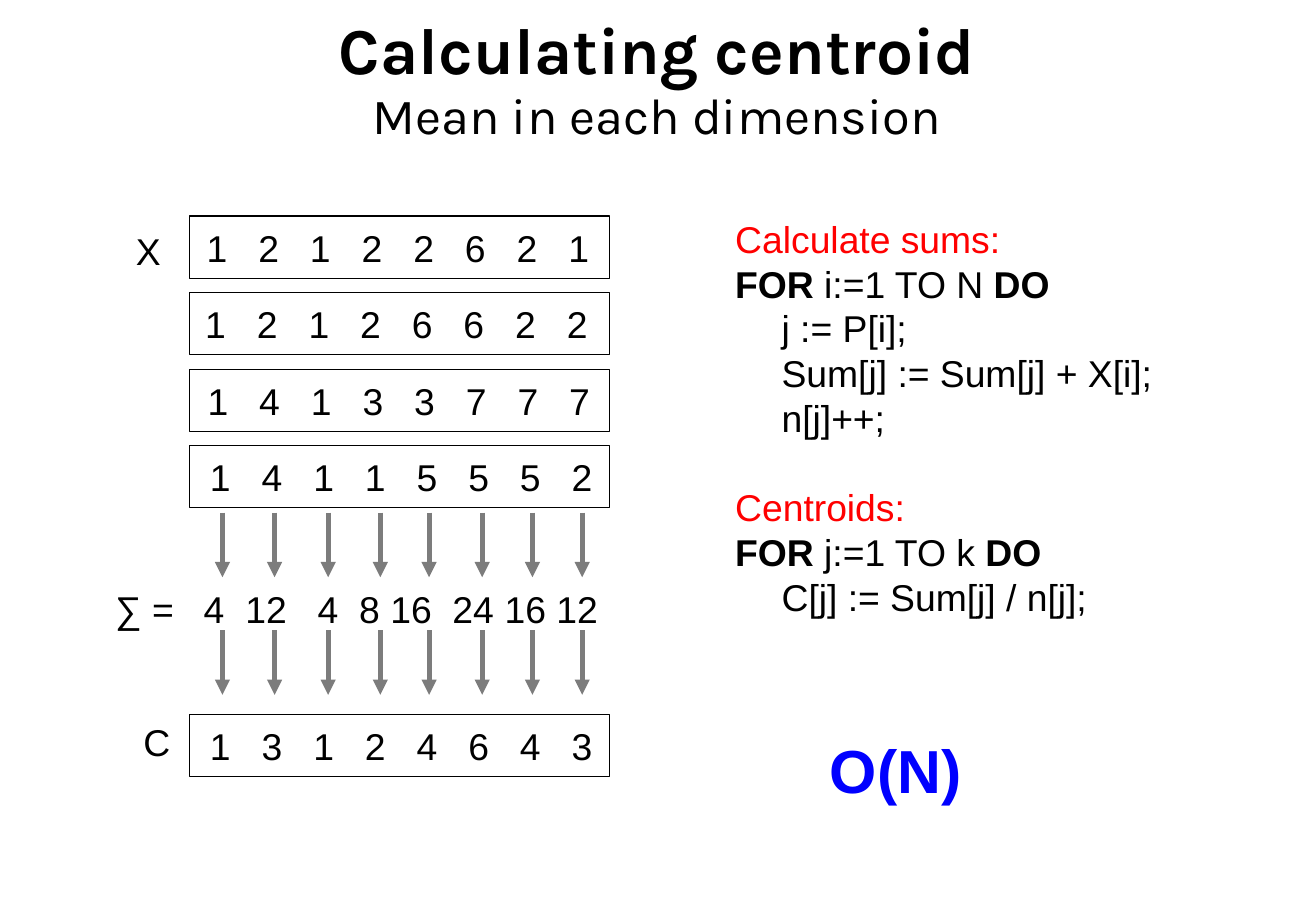
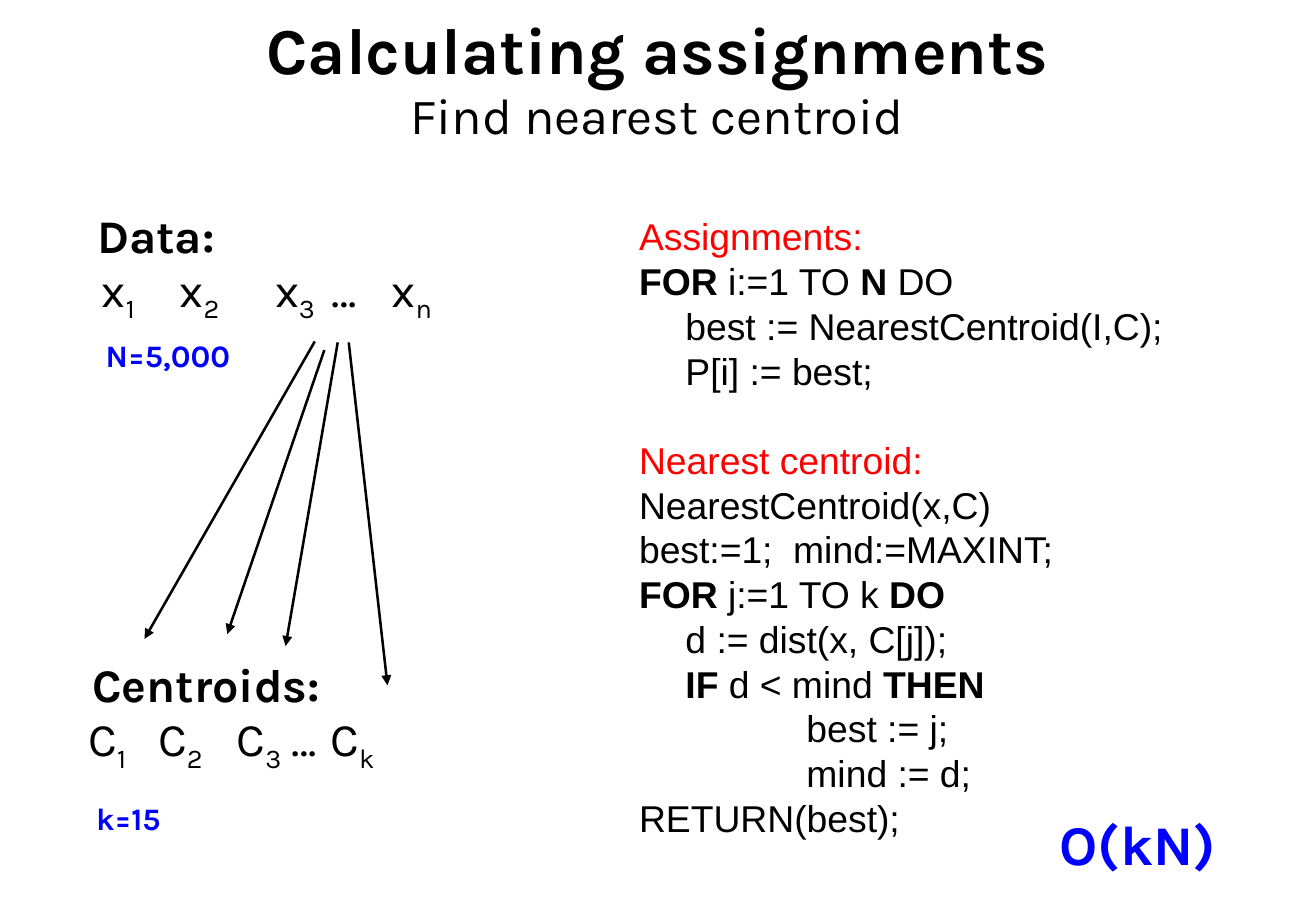
from pptx import Presentation
from pptx.dml.color import RGBColor
from pptx.enum.shapes import MSO_CONNECTOR, MSO_SHAPE
from pptx.enum.text import MSO_ANCHOR, PP_ALIGN
from pptx.oxml.ns import qn
from pptx.util import Cm, Pt
from lxml.etree import SubElement

BLACK, RED, BLUE, GREY = "000000", "FF0000", "0000FF", "7C7C7C"
HEAD_FONT, BODY_FONT = "Karla", "Arial"
BODY_SIZE, TERM_SIZE, COUNT_SIZE = 22.1, 27.7, 18.5
LINE_RATIO = 1.2
CODE_INDENTS = (0, 0.97, 3.5)

ROW_LEFT, ROW_WIDTH, ROW_HEIGHT = 3.96, 8.79, 1.3
VECTORS_TOP, ROW_STEP = 4.52, 1.6
DIGIT_STEP = 1.08
VECTORS = [
    (0.36, "12122621"),
    (0.33, "12126622"),
    (0.38, "14133777"),
    (0.43, "14115552"),
]
CENTROID = (0.43, "13124643")
CENTROID_TOP = 14.94
SUMS = "∑ = 4 12 4 8 16 24 16 12".replace("∑ =", "∑_=").split()
SUM_STOPS = (1.85, 2.72, 4.23, 5.1, 5.75, 7.05, 8.14, 9.22)
ARROW_COLUMNS = (4.65, 5.74, 6.86, 7.95, 8.97, 10.08, 11.13, 12.17)
ARROW_LENGTH = 1.35

SUMS_CODE = [
    (0, "*FOR* i:=1 TO N *DO*"),
    (1, "j := P[i];"),
    (1, "Sum[j] := Sum[j] + X[i];"),
    (1, "n[j]++;"),
]
CENTROIDS_CODE = [
    (0, "*FOR* j:=1 TO k *DO*"),
    (1, "C[j] := Sum[j] / n[j];"),
]
ASSIGNMENTS_CODE = [
    (0, "*FOR* i:=1 TO *N* DO"),
    (1, "best := NearestCentroid(I,C);"),
    (1, "P[i] := best;"),
]
NEAREST_CODE = [
    (0, "NearestCentroid(x,C)"),
    (0, "best:=1;  mind:=MAXINT;"),
    (0, "*FOR* j:=1 TO k *DO*"),
    (1, "d := dist(x, C[j]);"),
    (1, "*IF* d < mind *THEN*"),
    (2, "best := j;"),
    (2, "mind := d;"),
    (0, "RETURN(best);"),
]
SEARCH_ARROWS = [
    (6.58, 7.14, 3.02, 13.36),
    (6.78, 7.32, 4.75, 13.26),
    (7.06, 7.16, 5.97, 13.51),
    (7.29, 7.16, 8.1, 14.33),
]


def rgb(color):
    return RGBColor.from_string(color)


def style_font(font, size, color=BLACK, bold=False, name=BODY_FONT):
    font.size = Pt(size)
    font.name = name
    font.bold = bold
    font.color.rgb = rgb(color)


def set_line_height(paragraph, size):
    paragraph.line_spacing = Pt(round(size * LINE_RATIO, 1))


def add_tab_stops(paragraph, stops):
    tab_list = SubElement(paragraph._p.get_or_add_pPr(), qn("a:tabLst"))
    for stop in stops:
        SubElement(tab_list, qn("a:tab"), pos=str(Cm(stop)), algn="l")


def add_frame(slide, left, top, width, height):
    """Add a text box without insets and return its text frame."""
    frame = slide.shapes.add_textbox(Cm(left), Cm(top), Cm(width), Cm(height)).text_frame
    frame.word_wrap = True
    frame.margin_left = frame.margin_right = frame.margin_top = frame.margin_bottom = 0
    return frame


def add_label(slide, text, left, top, width, size=BODY_SIZE, color=BLACK,
              bold=False, name=BODY_FONT, stops=()):
    frame = add_frame(slide, left, top, width, size * 0.043)
    frame.text = text
    paragraph = frame.paragraphs[0]
    if stops:
        add_tab_stops(paragraph, stops)
    set_line_height(paragraph, size)
    style_font(paragraph.runs[0].font, size, color, bold, name)


def add_title(slide, title, subtitle):
    frame = add_frame(slide, 2.84, 0.33, 21.79, 2.74)
    frame.vertical_anchor = MSO_ANCHOR.MIDDLE
    frame.text = f"{title}\n{subtitle}"
    for paragraph, size, bold in zip(frame.paragraphs, (38.8, 30), (True, False)):
        paragraph.alignment = PP_ALIGN.CENTER
        paragraph.line_spacing = 0.93
        style_font(paragraph.runs[0].font, size, BLACK, bold, HEAD_FONT)


def add_code(slide, left, top, width, sections):
    """Write headed code sections; *words* between stars are bold."""
    lines = [line for heading, code in sections for line in [(None, heading), *code]]
    frame = add_frame(slide, left, top, width, len(lines) + 1)
    for number, (level, text) in enumerate(lines):
        paragraph = frame.add_paragraph() if number else frame.paragraphs[0]
        set_line_height(paragraph, BODY_SIZE)
        if level is None and number:
            paragraph.space_before = paragraph.line_spacing
        if level:
            paragraph._p.get_or_add_pPr().set("marL", str(Cm(CODE_INDENTS[level])))
        color = RED if level is None else BLACK
        for part_number, part in enumerate(text.split("*")):
            if part:
                run = paragraph.add_run()
                run.text = part
                style_font(run.font, BODY_SIZE, color, part_number % 2 == 1)


def add_vector(slide, top, inset, digits):
    """Add a framed row of evenly spaced digits."""
    row = slide.shapes.add_shape(MSO_SHAPE.RECTANGLE, Cm(ROW_LEFT), Cm(top),
                                 Cm(ROW_WIDTH), Cm(ROW_HEIGHT))
    row.shadow.inherit = False
    row.fill.background()
    row.line.color.rgb = rgb(BLACK)
    row.line.width = Pt(0.75)
    frame = row.text_frame
    frame.vertical_anchor = MSO_ANCHOR.MIDDLE
    frame.margin_left = Cm(inset)
    frame.margin_right = frame.margin_top = frame.margin_bottom = 0
    frame.text = "\t".join(digits)
    paragraph = frame.paragraphs[0]
    add_tab_stops(paragraph, [round(DIGIT_STEP * n, 2) for n in range(1, len(digits))])
    paragraph.alignment = PP_ALIGN.LEFT
    set_line_height(paragraph, BODY_SIZE)
    style_font(paragraph.runs[0].font, BODY_SIZE)


def add_terms(slide, terms, left, top, stops):
    """Write terms at tab stops; what follows the first letter is a subscript."""
    paragraph = add_frame(slide, left, top, 9, 1.2).paragraphs[0]
    add_tab_stops(paragraph, stops)
    set_line_height(paragraph, TERM_SIZE)
    for number, term in enumerate(terms):
        base = paragraph.add_run()
        base.text = ("\t" if number else "") + term[0]
        style_font(base.font, TERM_SIZE, name=HEAD_FONT)
        if term[1:]:
            subscript = paragraph.add_run()
            subscript.text = term[1:]
            style_font(subscript.font, TERM_SIZE, name=HEAD_FONT)
            subscript._r.get_or_add_rPr().set("baseline", "-25000")


def add_arrow(slide, x1, y1, x2, y2, color, width):
    arrow = slide.shapes.add_connector(MSO_CONNECTOR.STRAIGHT, Cm(x1), Cm(y1), Cm(x2), Cm(y2))
    arrow.line.color.rgb = rgb(color)
    arrow.line.width = Pt(width)
    SubElement(arrow.line._get_or_add_ln(), qn("a:tailEnd"), type="triangle")
    SubElement(arrow._element.spPr, qn("a:effectLst"))


def build_centroid_slide(slide):
    add_title(slide, "Calculating centroid", "Mean in each dimension")
    for number, (inset, digits) in enumerate(VECTORS):
        add_vector(slide, VECTORS_TOP + number * ROW_STEP, inset, digits)
    add_vector(slide, CENTROID_TOP, *CENTROID)
    add_label(slide, "X", 2.84, 4.78, 0.8)
    add_label(slide, "C", 3, 15.04, 0.8)
    add_label(slide, "\t".join(SUMS).replace("_", " "), 2.41, 12.27, 10.8, stops=SUM_STOPS)
    for top in (10.72, 13.18):
        for x in ARROW_COLUMNS:
            add_arrow(slide, x, top, x, top + ARROW_LENGTH, GREY, 3)
    add_code(slide, 15.37, VECTORS_TOP, 10,
             [("Calculate sums:", SUMS_CODE), ("Centroids:", CENTROIDS_CODE)])
    add_label(slide, "O(N)", 17.35, 15.32, 3.2, 36, BLUE, True)


def build_assignment_slide(slide):
    add_title(slide, "Calculating assignments", "Find nearest centroid")
    add_code(slide, 13.36, 4.47, 12,
             [("Assignments:", ASSIGNMENTS_CODE), ("Nearest centroid:", NEAREST_CODE)])
    for heading, left, top in (("Data:", 2.03, 4.32), ("Centroids:", 1.93, 13.72)):
        add_label(slide, heading, left, top, 6, TERM_SIZE, BLACK, True, HEAD_FONT)
    add_terms(slide, ("x1", "x2", "x3", "…", "xn"), 2.13, 5.61, (1.63, 3.62, 4.8, 6.06))
    add_terms(slide, ("C1", "C2", "C3", "…", "Ck"), 1.85, 15.01, (1.46, 3.1, 4.25, 5.06))
    for count, left, top in (("N=5,000", 2.21, 7.04), ("k=15", 2.01, 16.71)):
        add_label(slide, count, left, top, 3.4, COUNT_SIZE, BLUE, True, HEAD_FONT)
    add_label(slide, "O(kN)", 22.15, 16.92, 4, 33.2, BLUE, True, HEAD_FONT)
    for ends in SEARCH_ARROWS:
        add_arrow(slide, *ends, BLACK, 1.5)


def main():
    presentation = Presentation()
    presentation.slide_width = Cm(27.51)
    presentation.slide_height = Cm(19.05)
    blank = presentation.slide_layouts[6]
    for build in (build_centroid_slide, build_assignment_slide):
        build(presentation.slides.add_slide(blank))
    presentation.save("out.pptx")


if __name__ == "__main__":
    main()
